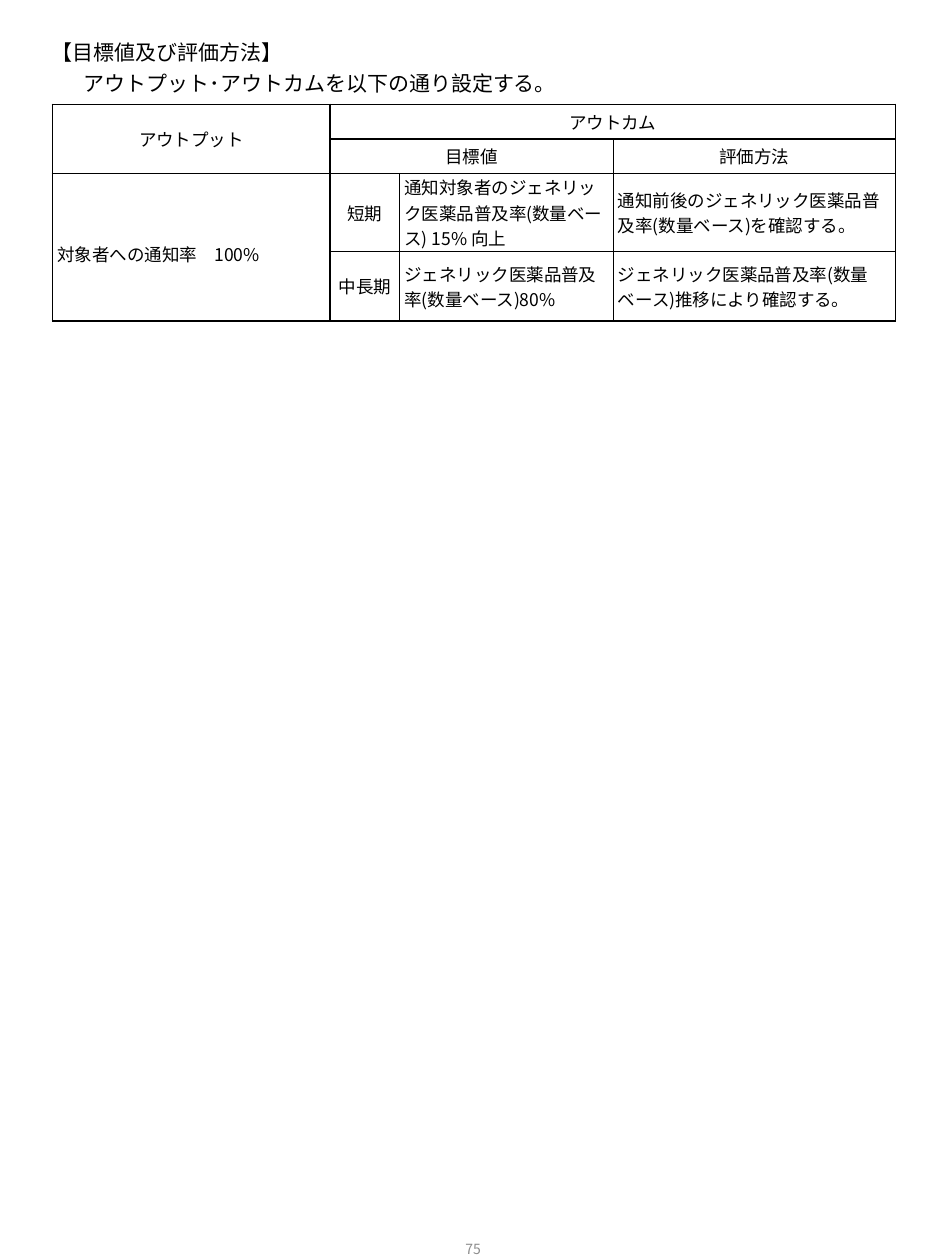
from pptx import Presentation
from pptx.dml.color import RGBColor
from pptx.enum.text import MSO_ANCHOR as ANCHOR, MSO_AUTO_SIZE as AUTO, PP_ALIGN as ALIGN
from pptx.oxml import parse_xml
from pptx.oxml.ns import nsdecls, qn
from pptx.util import Pt
from lxml import etree

THEME = {
    "font": "Noto Sans CJK JP",
    "ink": "000000", "muted": "8C8C8C",
    "title": 12, "body": 10, "page": 8,
    "thick": 1, "thin": 0.5,
}


def write(p, text, size, color="ink", **formats):
    for name, value in formats.items():
        setattr(p, name, value)
    r = p.add_run()
    r.text = text
    r.font.name, r.font.size = THEME["font"], Pt(THEME[size])
    r.font.color.rgb = RGBColor.from_string(THEME[color])
    ea = etree.SubElement(r.font._element, qn("a:ea"))
    ea.set("typeface", THEME["font"])


def set_borders(cell, weights):
    for i, (side, weight) in enumerate(weights.items()):
        line = parse_xml(
            f'<a:ln{side} {nsdecls("a")} w="{Pt(THEME[weight])}"><a:solidFill>'
            f'<a:srgbClr val="{THEME["ink"]}"/></a:solidFill></a:ln{side}>')
        cell._tc.get_or_add_tcPr().insert(i, line)


prs = Presentation()
prs.slide_width, prs.slide_height = Pt(540), Pt(720)
s = prs.slides.add_slide(prs.slide_layouts[5])

# Heading
sp = s.shapes.title
sp.left, sp.top, sp.width, sp.height = Pt(29.5), Pt(15.1), Pt(481.7), Pt(38.9)
tf = sp.text_frame
for name, value in {"margin_left": 0, "margin_right": 0, "margin_top": Pt(3.6),
                    "margin_bottom": Pt(3.6), "vertical_anchor": ANCHOR.TOP,
                    "word_wrap": True, "auto_size": AUTO.NONE}.items():
    setattr(tf, name, value)
heading = {"alignment": ALIGN.LEFT, "line_spacing": 1.25, "space_before": Pt(0)}
write(tf.paragraphs[0], "【目標値及び評価方法】", "title", **heading)
p = tf.add_paragraph()
write(p, "　アウトプット･アウトカムを以下の通り設定する。", "title", **heading)
p._p.get_or_add_pPr().set("marL", str(Pt(6.5)))

# Goals table: (row, column): (text, alignment)
CELLS = {
    (0, 0): ("アウトプット", ALIGN.CENTER),
    (0, 1): ("アウトカム", ALIGN.CENTER),
    (1, 1): ("目標値", ALIGN.CENTER),
    (1, 3): ("評価方法", ALIGN.CENTER),
    (2, 0): ("対象者への通知率　100%", ALIGN.LEFT),
    (2, 1): ("短期", ALIGN.CENTER),
    (2, 2): ("通知対象者のジェネリック医薬品普及率(数量ベース) 15% 向上", ALIGN.LEFT),
    (2, 3): ("通知前後のジェネリック医薬品普及率(数量ベース)を確認する。", ALIGN.LEFT),
    (3, 1): ("中長期", ALIGN.CENTER),
    (3, 2): ("ジェネリック医薬品普及率(数量ベース)80%", ALIGN.LEFT),
    (3, 3): ("ジェネリック医薬品普及率(数量ベース)推移により確認する。", ALIGN.LEFT),
}
WIDTHS = [158.7, 39.6, 122, 161.4]
HEIGHTS = [19.8, 19.8, 39.6, 39.6]
table = s.shapes.add_table(4, 4, Pt(30), Pt(59.6), Pt(sum(WIDTHS)), Pt(sum(HEIGHTS))).table
table.first_row = table.horz_banding = False
for column, width in zip(table.columns, WIDTHS):
    column.width = Pt(width)
for row, height in zip(table.rows, HEIGHTS):
    row.height = Pt(height)
for first, last in [((0, 0), (1, 0)), ((0, 1), (0, 3)), ((1, 1), (1, 2)), ((2, 0), (3, 0))]:
    table.cell(*first).merge(table.cell(*last))

for r in range(4):
    for c in range(4):
        cell = table.cell(r, c)
        for name, value in {"margin_left": Pt(2.9), "margin_right": Pt(2.9),
                            "margin_top": Pt(0.7), "margin_bottom": Pt(0.7),
                            "vertical_anchor": ANCHOR.MIDDLE}.items():
            setattr(cell, name, value)
        cell.fill.background()
        # Thin lines only inside the outcome block
        thin = {"L": r >= 1 and c >= 2, "R": r >= 1 and c in (1, 2),
                "T": r == 3 and c >= 1, "B": r == 2 and c >= 1}
        set_borders(cell, {side: "thin" if on else "thick" for side, on in thin.items()})
        if (r, c) in CELLS:
            text, align = CELLS[r, c]
            spacing = 1.5 if (r, c) == (2, 0) else 1.0
            write(cell.text_frame.paragraphs[0], text, "body",
                  alignment=align, line_spacing=spacing)

# Page number
tf = s.shapes.add_textbox(Pt(207.4), Pt(694.8), Pt(126), Pt(38.2)).text_frame
tf.word_wrap = True
tf.vertical_anchor = ANCHOR.MIDDLE
write(tf.paragraphs[0], "75", "page", "muted", alignment=ALIGN.CENTER)

prs.save("out.pptx")
